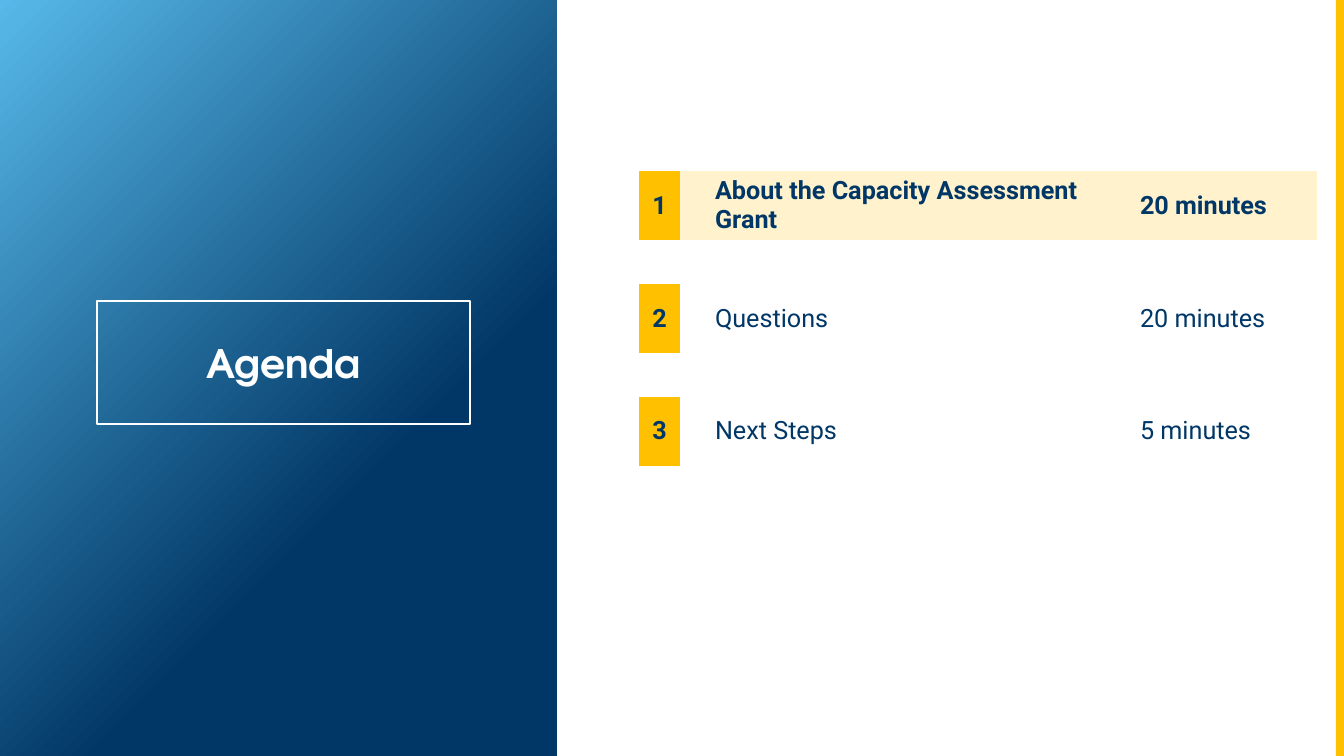
import pptx
import pptx.dml.color
import pptx.enum.shapes
import pptx.enum.text
import pptx.oxml.ns
import pptx.util

RGBColor = pptx.dml.color.RGBColor
NAVY = RGBColor(0x01, 0x37, 0x66)
SKY = RGBColor(0x57, 0xB9, 0xE9)
GOLD = RGBColor(0xFF, 0xC0, 0x00)
CREAM = RGBColor(0xFF, 0xF2, 0xCC)
WHITE = RGBColor(0xFF, 0xFF, 0xFF)

CENTER = pptx.enum.text.PP_ALIGN.CENTER
LEFT = pptx.enum.text.PP_ALIGN.LEFT
MIDDLE = pptx.enum.text.MSO_ANCHOR.MIDDLE

SLIDE_WIDTH, SLIDE_HEIGHT = 1344, 756
PANEL_WIDTH = 557
COLUMN_WIDTHS = [41, 25, 425, 187]
ITEM_HEIGHT, GAP_HEIGHT = 69, 44
ROW_HEIGHTS = [ITEM_HEIGHT, GAP_HEIGHT] * 3 + [GAP_HEIGHT]
AGENDA = [
    ("About the Capacity Assessment Grant", "20 minutes"),
    ("Questions", "20 minutes"),
    ("Next Steps", "5 minutes"),
]
CURRENT_ITEM = 1
NO_STYLE_NO_GRID = "{2D5ABB26-0587-4C30-8999-92F81FD0307C}"


def px(length):
    return pptx.util.Emu(round(length * 914400 / 100.8))


class AgendaSlide:
    body_font = "Roboto"
    title_font = "TeX Gyre Adventor"

    def __init__(self, deck):
        self.slide = deck.slides.add_slide(deck.slide_layouts[6])

    def rectangle(self, left, top, width, height):
        box = self.slide.shapes.add_shape(
            pptx.enum.shapes.MSO_SHAPE.RECTANGLE,
            px(left), px(top), px(width), px(height))
        box.shadow.inherit = False
        box.line.fill.background()
        return box

    def gradient_panel(self, left, top, width, height):
        """Fade from sky at the top left to navy, reached at 65 %."""
        fill = self.rectangle(left, top, width, height).fill
        fill.gradient()
        fill.gradient_angle = 315
        for stop, color, position in zip(fill.gradient_stops, (SKY, NAVY), (0, 0.65)):
            stop.color.rgb = color
            stop.position = position

    def edge_bar(self, left, top, width, height):
        fill = self.rectangle(left, top, width, height).fill
        fill.solid()
        fill.fore_color.rgb = GOLD

    def title(self, text, left, top, width, height):
        box = self.rectangle(left, top, width, height)
        box.fill.background()
        box.line.color.rgb = WHITE
        box.line.width = pptx.util.Pt(1)
        box.text_frame.word_wrap = True
        box.text_frame.vertical_anchor = MIDDLE
        self.set_text(box.text_frame, text, self.title_font, 28, WHITE, True, CENTER)

    def set_text(self, frame, text, font_name, size, color, bold, align):
        frame.text = text
        para = frame.paragraphs[0]
        para.alignment = align
        para.font.name = font_name
        para.font.size = pptx.util.Pt(size)
        para.font.color.rgb = color
        para.font.bold = bold

    def table(self, left, top):
        frame = self.slide.shapes.add_table(
            len(ROW_HEIGHTS), len(COLUMN_WIDTHS), px(left), px(top),
            px(sum(COLUMN_WIDTHS)), px(sum(ROW_HEIGHTS)))
        style = frame.element.find(".//" + pptx.oxml.ns.qn("a:tableStyleId"))
        style.text = NO_STYLE_NO_GRID
        table = frame.table
        table.first_row = table.horz_banding = False
        for column, width in zip(table.columns, COLUMN_WIDTHS):
            column.width = px(width)
        for row, height in zip(table.rows, ROW_HEIGHTS):
            row.height = px(height)
        for cell in table.iter_cells():
            cell.fill.background()
            cell.vertical_anchor = MIDDLE
            cell.margin_top = cell.margin_bottom = px(3)
        for number, (topic, duration) in enumerate(AGENDA, 1):
            self.agenda_row(table, number, topic, duration)

    def agenda_row(self, table, number, topic, duration):
        row = 2 * (number - 1)
        current = number == CURRENT_ITEM
        for column, text in enumerate((str(number), "", topic, duration)):
            cell = table.cell(row, column)
            is_number = column == 0
            if is_number or current:
                cell.fill.solid()
                cell.fill.fore_color.rgb = GOLD if is_number else CREAM
            if text:
                self.set_text(cell.text_frame, text, self.body_font, 18, NAVY,
                              is_number or current, CENTER if is_number else LEFT)


def main():
    deck = pptx.Presentation()
    deck.slide_width, deck.slide_height = px(SLIDE_WIDTH), px(SLIDE_HEIGHT)
    page = AgendaSlide(deck)
    page.gradient_panel(0, 0, PANEL_WIDTH, SLIDE_HEIGHT)
    page.edge_bar(SLIDE_WIDTH - 8, 0, 8, SLIDE_HEIGHT)
    page.table(639, 171)
    page.title("Agenda", 97, 301, 373, 123)
    deck.save("out.pptx")


if __name__ == "__main__":
    main()
